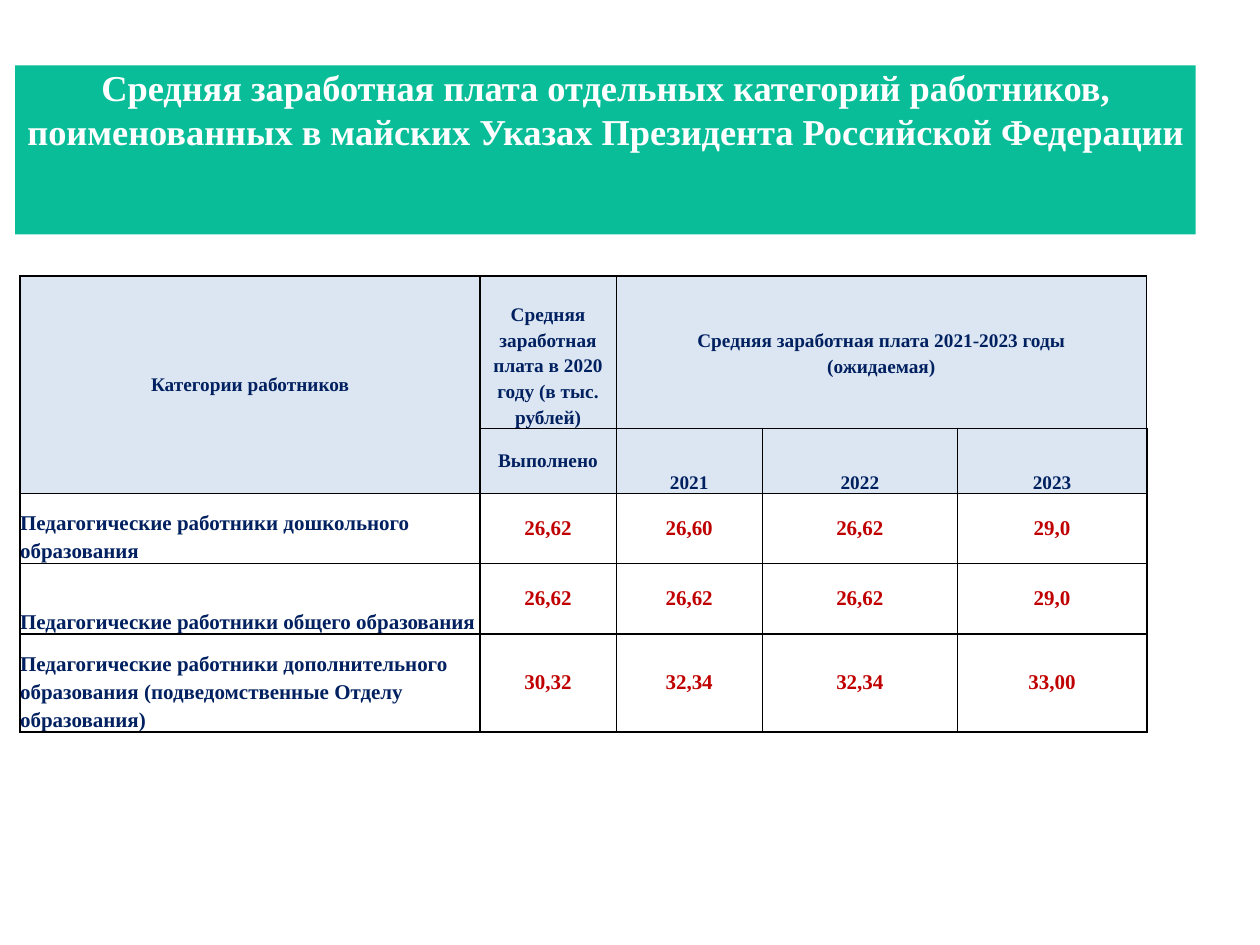
"""Build a slide with a table of average pay by category of worker."""
from pptx import Presentation
from pptx import util as u
from pptx.dml.color import RGBColor
from pptx.enum import shapes, text
from pptx.oxml import parse_xml
from pptx.oxml.ns import nsdecls

TITLE = ("Средняя заработная плата отдельных категорий работников, "
         "поименованных в майских Указах Президента Российской Федерации")
HEADER = [
    ["Категории работников", "Средняя заработная плата в 2020 году (в тыс. рублей)",
     "Средняя заработная плата 2021-2023 годы\n(ожидаемая)", None, None],
    [None, "Выполнено", "2021", "2022", "2023"],
]
BODY = [
    ["Педагогические работники дошкольного образования", "26,62", "26,60", "26,62", "29,0"],
    ["Педагогические работники общего образования", "26,62", "26,62", "26,62", "29,0"],
    ["Педагогические работники дополнительного образования (подведомственные Отделу образования)",
     "30,32", "32,34", "32,34", "33,00"],
]
MERGES = [((0, 0), (1, 0)), ((0, 2), (0, 4))]
BOTTOM_CELLS = {(0, 1), (1, 2), (1, 3), (1, 4), (2, 0), (3, 0), (4, 0)}
WIDTHS = [3.65, 1.08, 1.16, 1.55, 1.5]
HEIGHTS = [1.21, 0.52, 0.55, 0.56, 0.78]
THICK_COLUMN_EDGES = {0, 1, 5}
THICK_ROW_EDGES = {4}
THEME = {
    "font": "Times New Roman", "title_size": 20.8, "header_size": 11, "body_size": 12,
    "banner": "0ABD99", "header": "DCE6F2", "white": "FFFFFF", "navy": "002060",
    "red": "C00000", "border": "000000", "thin": 0.75, "thick": 1.25,
}


def write_text(frame, content, *, size, color, align="CENTER", anchor="MIDDLE", spacing=None):
    """Fill a text frame with one paragraph per line of content."""
    frame.word_wrap = True
    frame.vertical_anchor = text.MSO_ANCHOR[anchor]
    for position, line in enumerate(content.split("\n")):
        para = frame.add_paragraph() if position else frame.paragraphs[0]
        para.alignment = text.PP_ALIGN[align]
        para.line_spacing = spacing
        span = para.add_run()
        span.text = line
        span.font.name, span.font.size, span.font.bold = THEME["font"], u.Pt(size), True
        span.font.color.rgb = RGBColor.from_string(color)


def set_borders(cell, row, column):
    """Draw the four edges of a cell, thick where the grid asks for it."""
    edges = [("lnL", column in THICK_COLUMN_EDGES), ("lnR", column + 1 in THICK_COLUMN_EDGES),
             ("lnT", row in THICK_ROW_EDGES), ("lnB", row + 1 in THICK_ROW_EDGES)]
    properties = cell._tc.get_or_add_tcPr()
    for position, (tag, is_thick) in enumerate(edges):
        width = u.Pt(THEME["thick" if is_thick else "thin"])
        properties.insert(position, parse_xml(
            f'<a:{tag} {nsdecls("a")} w="{width}"><a:solidFill>'
            f'<a:srgbClr val="{THEME["border"]}"/></a:solidFill></a:{tag}>'))


def add_banner(page):
    """Add the title banner."""
    box = page.shapes.add_shape(shapes.MSO_SHAPE.RECTANGLE, *map(u.Inches, (0.12, 0.52, 9.37, 1.34)))
    box.shadow.inherit = False
    box.fill.solid()
    box.fill.fore_color.rgb = RGBColor.from_string(THEME["banner"])
    box.line.fill.background()
    frame = box.text_frame
    frame.margin_left = frame.margin_right = frame.margin_top = frame.margin_bottom = 0
    write_text(frame, TITLE, size=THEME["title_size"], color=THEME["white"], anchor="TOP")


def format_cell(cell, content, row, column):
    """Set the fill, edges and text of one cell."""
    is_header = row < len(HEADER)
    is_label = not is_header and column == 0
    cell.margin_left = cell.margin_right = cell.margin_top = cell.margin_bottom = 0
    if is_header:
        cell.fill.solid()
        cell.fill.fore_color.rgb = RGBColor.from_string(THEME["header"])
    else:
        cell.fill.background()
    set_borders(cell, row, column)
    if content is None:
        return
    is_bottom = (row, column) in BOTTOM_CELLS
    write_text(cell.text_frame, content,
               size=THEME["header_size" if is_header else "body_size"],
               color=THEME["navy" if is_header or is_label else "red"],
               align="LEFT" if is_label else "CENTER",
               spacing=1.2 if is_bottom or "\n" in content else None)
    cell.vertical_anchor = text.MSO_ANCHOR.BOTTOM if is_bottom else text.MSO_ANCHOR.MIDDLE


def add_pay_table(page):
    """Add the pay table."""
    size = u.Inches(sum(WIDTHS)), u.Inches(sum(HEIGHTS))
    table = page.shapes.add_table(len(HEIGHTS), len(WIDTHS), u.Inches(0.16), u.Inches(2.19), *size).table
    table.first_row = table.horz_banding = False
    for column, width in zip(table.columns, WIDTHS):
        column.width = u.Inches(width)
    for row, height in zip(table.rows, HEIGHTS):
        row.height = u.Inches(height)
    for first, last in MERGES:
        table.cell(*first).merge(table.cell(*last))
    for row, contents in enumerate(HEADER + BODY):
        for column, content in enumerate(contents):
            format_cell(table.cell(row, column), content, row, column)


def main():
    """Build and save the deck."""
    deck = Presentation()
    deck.slide_width, deck.slide_height = u.Inches(10), u.Inches(7.5)
    page = deck.slides.add_slide(deck.slide_layouts[6])
    add_banner(page)
    add_pay_table(page)
    deck.save("out.pptx")


if __name__ == "__main__":
    main()
